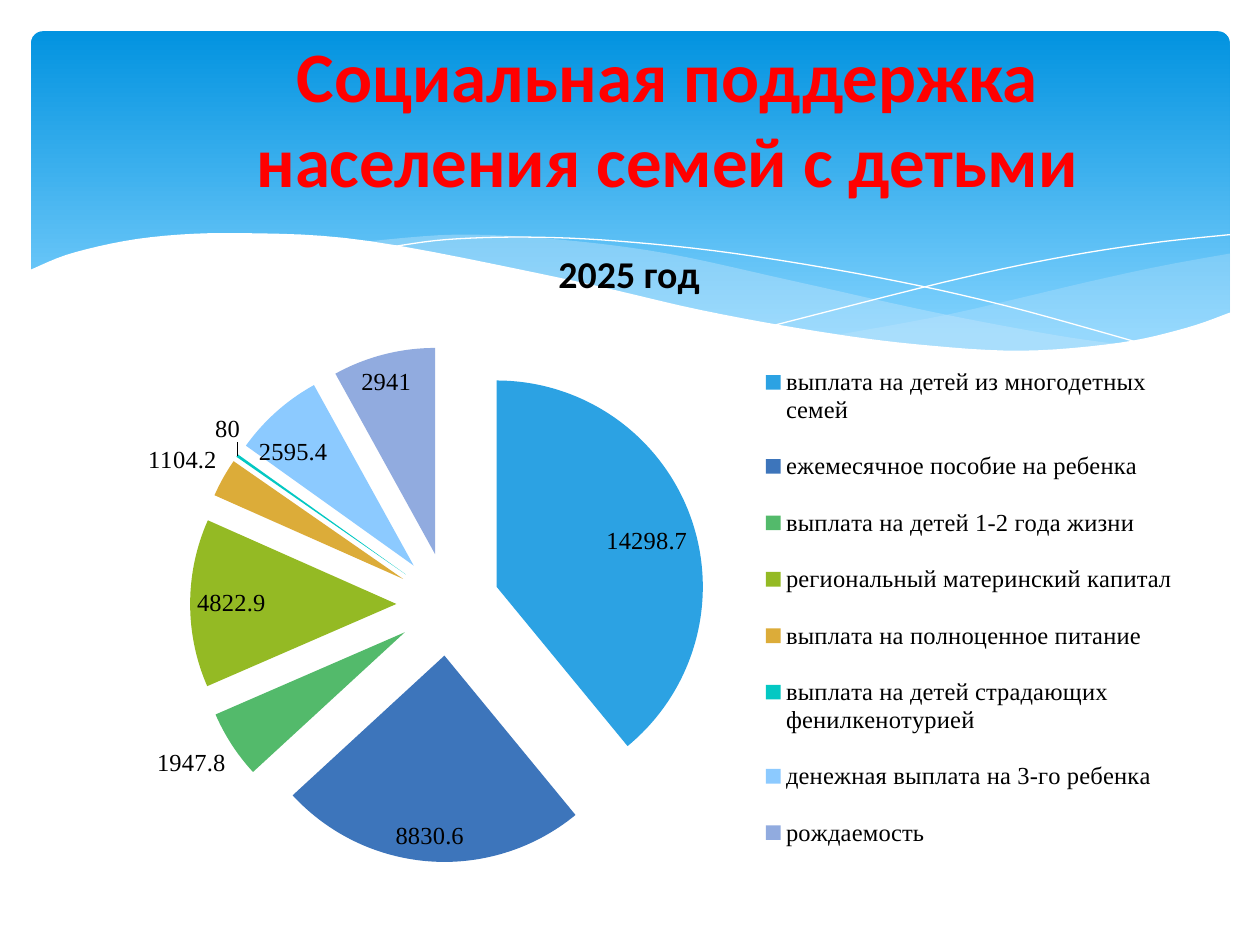
from dataclasses import dataclass

from lxml import etree
from pptx import Presentation
from pptx.chart.data import CategoryChartData
from pptx.dml.color import RGBColor
from pptx.enum.chart import XL_CHART_TYPE, XL_LABEL_POSITION, XL_LEGEND_POSITION
from pptx.enum.shapes import MSO_SHAPE
from pptx.enum.text import MSO_ANCHOR, PP_ALIGN
from pptx.oxml import parse_xml
from pptx.oxml.ns import nsdecls, qn
from pptx.util import Cm, Pt

PIE = XL_CHART_TYPE.PIE_EXPLODED
BEST_FIT = XL_LABEL_POSITION.BEST_FIT
LEGEND_RIGHT = XL_LEGEND_POSITION.RIGHT
ROUNDED = MSO_SHAPE.ROUNDED_RECTANGLE
MIDDLE = MSO_ANCHOR.MIDDLE
CENTER = PP_ALIGN.CENTER


@dataclass(frozen=True)
class Theme:
    sky_top: str = "0293E0"
    sky_bottom: str = "83D3FE"
    wave: str = "C6E7FC"
    white: str = "FFFFFF"
    black: str = "000000"
    title: str = "FF0000"
    heading_font: str = "Calibri"
    chart_font: str = "Times New Roman"
    title_size: float = 40.5
    year_size: float = 21.6
    chart_size: float = 14


THEME = Theme()

# Benefit, amount, slice colour
BENEFITS = [
    ("выплата на детей из многодетных семей", 14298.7, "2CA2E3"),
    ("ежемесячное пособие на ребенка", 8830.6, "3D75BB"),
    ("выплата на детей 1-2 года жизни", 1947.8, "53BA6B"),
    ("региональный материнский капитал", 4822.9, "94BA24"),
    ("выплата на полноценное питание", 1104.2, "DCAC39"),
    ("выплата на детей страдающих фенилкенотурией", 80, "04C8C3"),
    ("денежная выплата на 3-го ребенка", 2595.4, "8CCAFF"),
    ("рождаемость", 2941, "91ABDF"),
]

# Wave outlines in cm from the corner of the header
RIGHT_WAVE_TOP = [(16.19, 6.13), (18.53, 5.7), (21.27, 5.06), (22.79, 4.73), (24.17, 4.48)]
RIGHT_WAVE_BOTTOM = [(24.17, 5.67), (23.15, 6.05), (21.78, 6.33), (20.08, 6.46),
                     (18.32, 6.38), (16.19, 6.13)]
MID_WAVE_TOP = [(6.66, 4.25), (8.57, 4.1), (10.63, 4.2), (12.81, 4.48), (15.38, 5.04),
                (18.22, 5.67), (20.66, 6.13), (22.08, 6.33)]
MID_WAVE_BOTTOM = [(22.08, 6.33), (20.18, 6.46), (18.4, 6.41), (16.29, 6.16),
                   (13.78, 5.7), (10.8, 5.04), (8.59, 4.56), (6.66, 4.25)]
FALLING_LINE = [(7.25, 4.35), (8.37, 4.2), (9.97, 4.15), (11.82, 4.23), (14.18, 4.48),
                (17.05, 4.96), (19.59, 5.52), (22.44, 6.31)]
RISING_LINE = [(14.97, 5.93), (18.4, 5.06), (20.63, 4.58), (22.51, 4.28), (24.17, 4.1)]
PAGE_EDGE = [(-0.02, 4.81), (0.9, 4.45), (2.42, 4.15), (4.3, 4.07), (6.82, 4.23),
             (10.75, 4.99), (13.5, 5.62), (15.86, 6.05), (17.84, 6.31), (19.95, 6.44),
             (21.93, 6.28), (23.28, 5.98), (24.22, 5.65)]
PAGE_CORNERS = [(24.22, 7.76), (-0.02, 7.76)]


def rgb(code):
    return RGBColor.from_string(code)


def style_font(font, size, color, name, bold=False):
    font.size, font.name, font.bold = Pt(size), name, bold
    font.color.rgb = rgb(color)


def smooth(knots, steps=6):
    """Catmull-Rom curve through the knots."""
    padded = [knots[0], *knots, knots[-1]]
    curve = []
    for a, b, c, d in zip(padded, padded[1:], padded[2:], padded[3:]):
        for step in range(steps):
            t = step / steps
            curve.append(tuple(
                (2 * q + (r - p) * t + (2 * p - 5 * q + 4 * r - s) * t ** 2
                 + (3 * q - p - 3 * r + s) * t ** 3) / 2
                for p, q, r, s in zip(a, b, c, d)))
    return curve + [knots[-1]]


def add_outline(slide, box, points, closed=True):
    left, top = box[:2]
    corners = [(Cm(left + x), Cm(top + y)) for x, y in points]
    builder = slide.shapes.build_freeform(*corners[0])
    builder.add_line_segments(corners[1:], close=closed)
    outline = builder.convert_to_shape()
    outline.shadow.inherit = False
    return outline


def add_area(slide, box, points, color, opacity=100):
    area = add_outline(slide, box, points)
    area.fill.solid()
    area.fill.fore_color.rgb = rgb(color)
    area.line.fill.background()
    if opacity < 100:
        tint = area.fill._xPr.find(".//" + qn("a:srgbClr"))
        etree.SubElement(tint, qn("a:alpha")).set("val", str(opacity * 1000))


def add_header(slide, box):
    left, top, width, height = box
    # Sky panel
    sky = slide.shapes.add_shape(ROUNDED, Cm(left), Cm(top), Cm(width), Cm(height))
    sky.adjustments[0] = 0.034
    sky.shadow.inherit = False
    sky.line.fill.background()
    sky.fill.gradient()
    sky.fill.gradient_angle = 270
    stops = zip(sky.fill.gradient_stops, (0, 0.9), (THEME.sky_top, THEME.sky_bottom))
    for stop, position, color in stops:
        stop.position = position
        stop.color.rgb = rgb(color)
    # Translucent waves, thin lines, white page edge
    add_area(slide, box, smooth(RIGHT_WAVE_TOP) + smooth(RIGHT_WAVE_BOTTOM), THEME.wave, 29)
    add_area(slide, box, smooth(MID_WAVE_TOP) + smooth(MID_WAVE_BOTTOM), THEME.wave, 40)
    for knots in (FALLING_LINE, RISING_LINE):
        crest = add_outline(slide, box, smooth(knots), closed=False)
        crest.fill.background()
        crest.line.color.rgb = rgb(THEME.white)
        crest.line.width = Pt(0)
    add_area(slide, box, smooth(PAGE_EDGE) + PAGE_CORNERS, THEME.white)


def add_title(slide, box):
    title = slide.shapes.add_textbox(*map(Cm, box)).text_frame
    title.word_wrap = True
    title.vertical_anchor = MIDDLE
    title.margin_left = Cm(2)
    heading = title.paragraphs[0]
    heading.alignment = CENTER
    for number, words in enumerate(("Социальная поддержка", "населения семей с детьми")):
        if number:
            heading.add_line_break()
        run = heading.add_run()
        run.text = words
        style_font(run.font, THEME.title_size, THEME.title, THEME.heading_font, True)


def manual_layout(x, y, w, h, inner=False):
    target = '<c:layoutTarget val="inner"/>' if inner else ""
    return parse_xml(
        f'<c:layout {nsdecls("c")}><c:manualLayout>{target}'
        '<c:xMode val="edge"/><c:yMode val="edge"/>'
        f'<c:x val="{x}"/><c:y val="{y}"/><c:w val="{w}"/><c:h val="{h}"/>'
        '</c:manualLayout></c:layout>')


def add_benefit_chart(slide, box):
    names, amounts, colors = zip(*BENEFITS)
    data = CategoryChartData()
    data.categories = names
    data.add_series("2025 год", amounts)
    chart = slide.shapes.add_chart(PIE, *map(Cm, box), data).chart
    style_font(chart.font, THEME.chart_size, THEME.black, THEME.chart_font)

    # Year heading
    chart.has_title = True
    year = chart.chart_title.text_frame.paragraphs[0].add_run()
    year.text = "2025 год"
    style_font(year.font, THEME.year_size, THEME.black, THEME.heading_font, True)
    chart.chart_title.include_in_layout = False

    # Legend
    chart.has_legend = True
    legend = chart.legend
    legend.position = LEGEND_RIGHT
    legend.include_in_layout = False
    style_font(legend.font, THEME.chart_size, THEME.black, THEME.chart_font)
    legend._element.insert(1, manual_layout(0.61, 0.18, 0.38, 0.81))

    # Exploded slices
    plot_area = chart._chartSpace.find(".//" + qn("c:plotArea"))
    for layout in plot_area.findall(qn("c:layout")):
        plot_area.remove(layout)
    plot_area.insert(0, manual_layout(0.11, 0.19, 0.46, 0.78, inner=True))
    chart.plots[0].vary_by_categories = True
    series = chart.plots[0].series[0]
    for index, color in enumerate(colors):
        piece = series.points[index].format
        piece.fill.solid()
        piece.fill.fore_color.rgb = rgb(color)
        piece.line.fill.background()
    for old in series._element.findall(qn("c:explosion")):
        series._element.remove(old)
    explosion = parse_xml(f'<c:explosion {nsdecls("c")} val="25"/>')
    series._element.find(qn("c:dPt")).addprevious(explosion)

    # Amounts
    labels = series.data_labels
    labels.show_value = True
    labels.position = BEST_FIT
    style_font(labels.font, THEME.chart_size, THEME.black, THEME.chart_font)


def main():
    deck = Presentation()
    deck.slide_width, deck.slide_height = Cm(25.4), Cm(19.05)
    slide = deck.slides.add_slide(deck.slide_layouts[6])
    add_header(slide, (0.63, 0.63, 24.16, 6.86))
    add_benefit_chart(slide, (1.27, 4.45, 22.83, 13.33))
    add_title(slide, (1.27, 0.76, 22.63, 3.18))
    deck.save("out.pptx")


if __name__ == "__main__":
    main()
